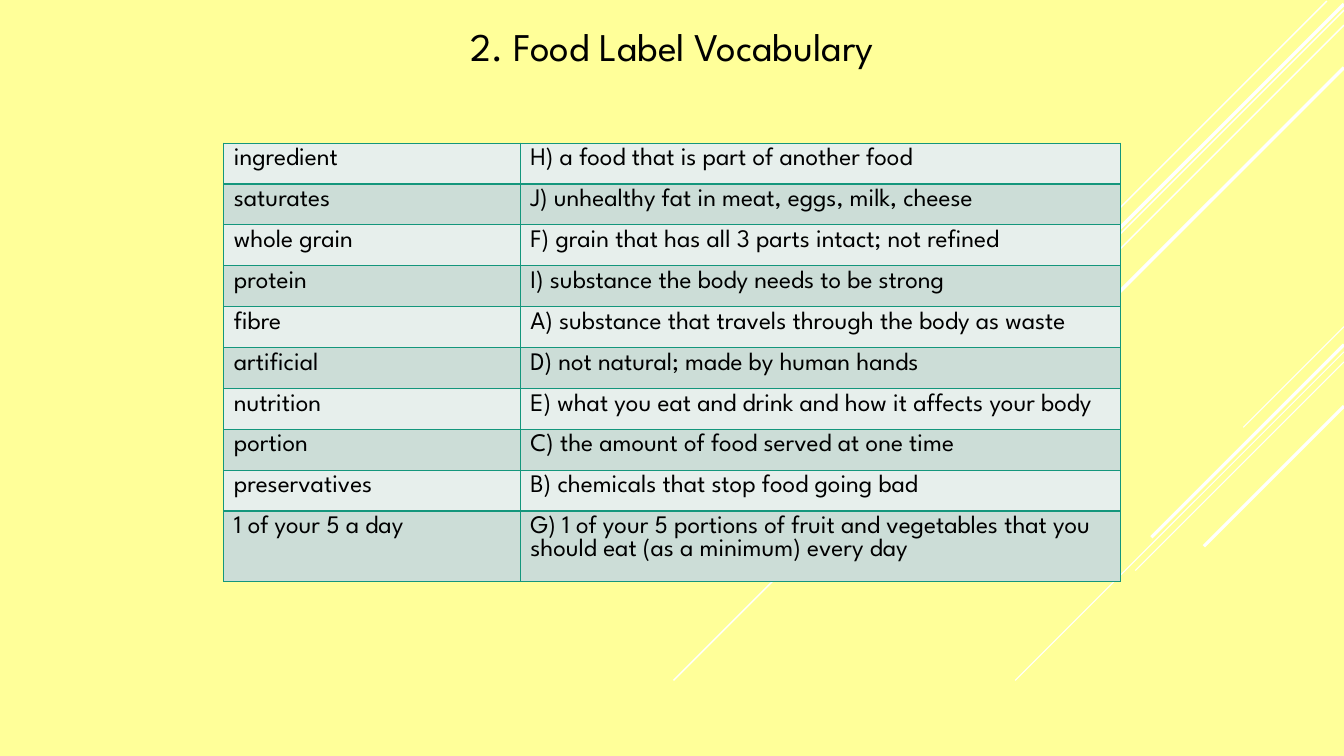
from pptx import Presentation
from pptx.dml.color import RGBColor
from pptx.enum.text import MSO_AUTO_SIZE, PP_ALIGN
from pptx.enum.shapes import MSO_CONNECTOR
from pptx.oxml import parse_xml
from pptx.oxml.ns import nsdecls
from pptx.util import Inches, Pt

SLIDE_WIDTH = 13.33

# Start x, start y, run to the lower left, line width
RAYS = [
    (SLIDE_WIDTH, 3.24, 1.0, 0.75),
    (SLIDE_WIDTH, 3.49, 3.26, 0.75),
    (SLIDE_WIDTH, 3.59, 2.07, 0.75),
    (SLIDE_WIDTH, 3.42, 1.91, 2.25),
    (SLIDE_WIDTH, 4.03, 1.39, 2.25),
    (13.16, 0.01, 4.16, 1),
    (SLIDE_WIDTH, 0.1, 6.65, 1),
    (SLIDE_WIDTH, 0.25, 5.42, 1),
    (SLIDE_WIDTH, 0.04, 5.3, 2.5),
    (SLIDE_WIDTH, 0.67, 4.75, 2.5),
]

VOCABULARY = [
    ("ingredient", "H) a food that is part of another food"),
    ("saturates", "J) unhealthy fat in meat, eggs, milk, cheese"),
    ("whole grain", "F) grain that has all 3 parts intact; not refined"),
    ("protein", "I) substance the body needs to be strong"),
    ("fibre", "A) substance that travels through the body as waste"),
    ("artificial", "D) not natural; made by human hands"),
    ("nutrition", "E) what you eat and drink and how it affects your body"),
    ("portion", "C) the amount of food served at one time"),
    ("preservatives", "B) chemicals that stop food going bad"),
    ("1 of your 5 a day", "G) 1 of your 5 portions of fruit and vegetables "
     "that you should eat (as a minimum) every day"),
]


def color(hex_string):
    return RGBColor.from_string(hex_string)


class VocabularySlide:
    font_name = "League Spartan"
    text_color = "000000"
    background = "FFFF99"
    ray_color = "FFFFFF"
    border_color = "14967C"
    band_fills = ("E7EFEC", "CCDDD7")

    def __init__(self, presentation):
        self.slide = presentation.slides.add_slide(presentation.slide_layouts[6])
        fill = self.slide.background.fill
        fill.solid()
        fill.fore_color.rgb = color(self.background)

    def style_text(self, paragraph, size):
        paragraph.font.name = self.font_name
        paragraph.font.size = Pt(size)
        paragraph.font.color.rgb = color(self.text_color)

    def ray(self, x, y, run, width):
        """Draw a 45-degree line towards the lower left."""
        line = self.slide.shapes.add_connector(
            MSO_CONNECTOR.STRAIGHT,
            Inches(x), Inches(y), Inches(x - run), Inches(y + run))
        line.line.color.rgb = color(self.ray_color)
        line.line.width = Pt(width)
        line._element.spPr.append(parse_xml(f"<a:effectLst {nsdecls('a')}/>"))

    def title(self, text, left, top, width, height):
        box = self.slide.shapes.add_textbox(
            Inches(left), Inches(top), Inches(width), Inches(height))
        frame = box.text_frame
        frame.word_wrap = True
        frame.auto_size = MSO_AUTO_SIZE.SHAPE_TO_FIT_TEXT
        heading = frame.paragraphs[0]
        heading.text = text
        heading.alignment = PP_ALIGN.CENTER
        self.style_text(heading, 28)

    def border(self, cell):
        properties = cell._tc.get_or_add_tcPr()
        for side in ("lnL", "lnR", "lnT", "lnB"):
            properties.append(parse_xml(
                f'<a:{side} {nsdecls("a")} w="{Pt(1)}"><a:solidFill>'
                f'<a:srgbClr val="{self.border_color}"/></a:solidFill></a:{side}>'))

    def table(self, entries, left, top, column_widths, row_heights):
        grid = self.slide.shapes.add_table(
            len(entries), len(column_widths), Inches(left), Inches(top),
            Inches(sum(column_widths)), Inches(sum(row_heights))).table
        grid.first_row = False
        for column, width in zip(grid.columns, column_widths):
            column.width = Inches(width)
        for index, (row, height, entry) in enumerate(
                zip(grid.rows, row_heights, entries)):
            row.height = Inches(height)
            for cell, text in zip(row.cells, entry):
                self.border(cell)
                cell.fill.solid()
                cell.fill.fore_color.rgb = color(self.band_fills[index % 2])
                cell.text = text
                self.style_text(cell.text_frame.paragraphs[0], 18)


def main():
    presentation = Presentation()
    presentation.slide_width = Inches(SLIDE_WIDTH)
    presentation.slide_height = Inches(7.5)
    slide = VocabularySlide(presentation)
    for ray in RAYS:
        slide.ray(*ray)
    slide.title("2. Food Label Vocabulary", 3.7, 0.17, 5.93, 0.57)
    single_line_rows = len(VOCABULARY) - 1
    row_heights = [3.65 / single_line_rows] * single_line_rows + [0.7]
    slide.table(VOCABULARY, 2.22, 1.42, (2.94, 5.95), row_heights)
    presentation.save("out.pptx")


if __name__ == "__main__":
    main()
